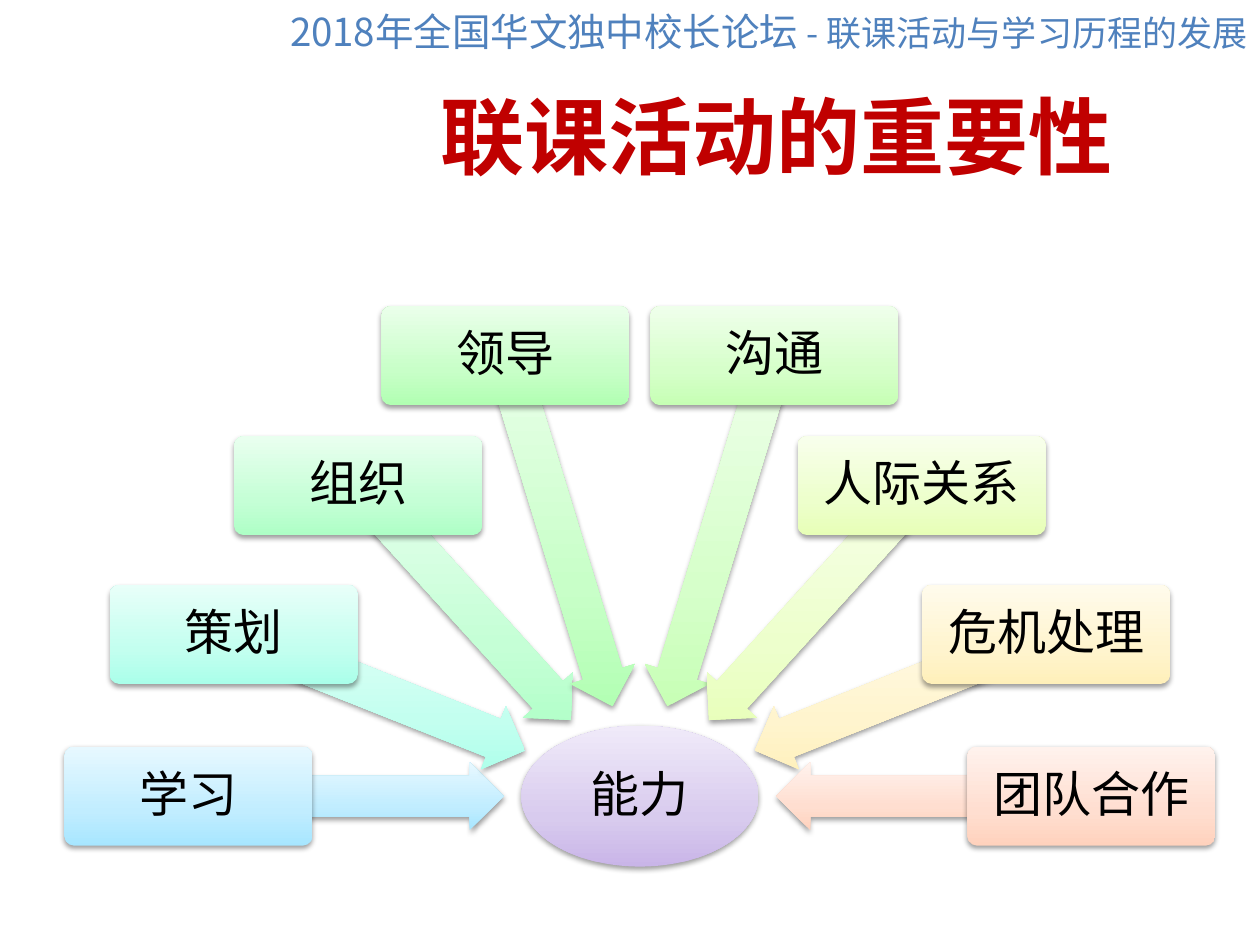
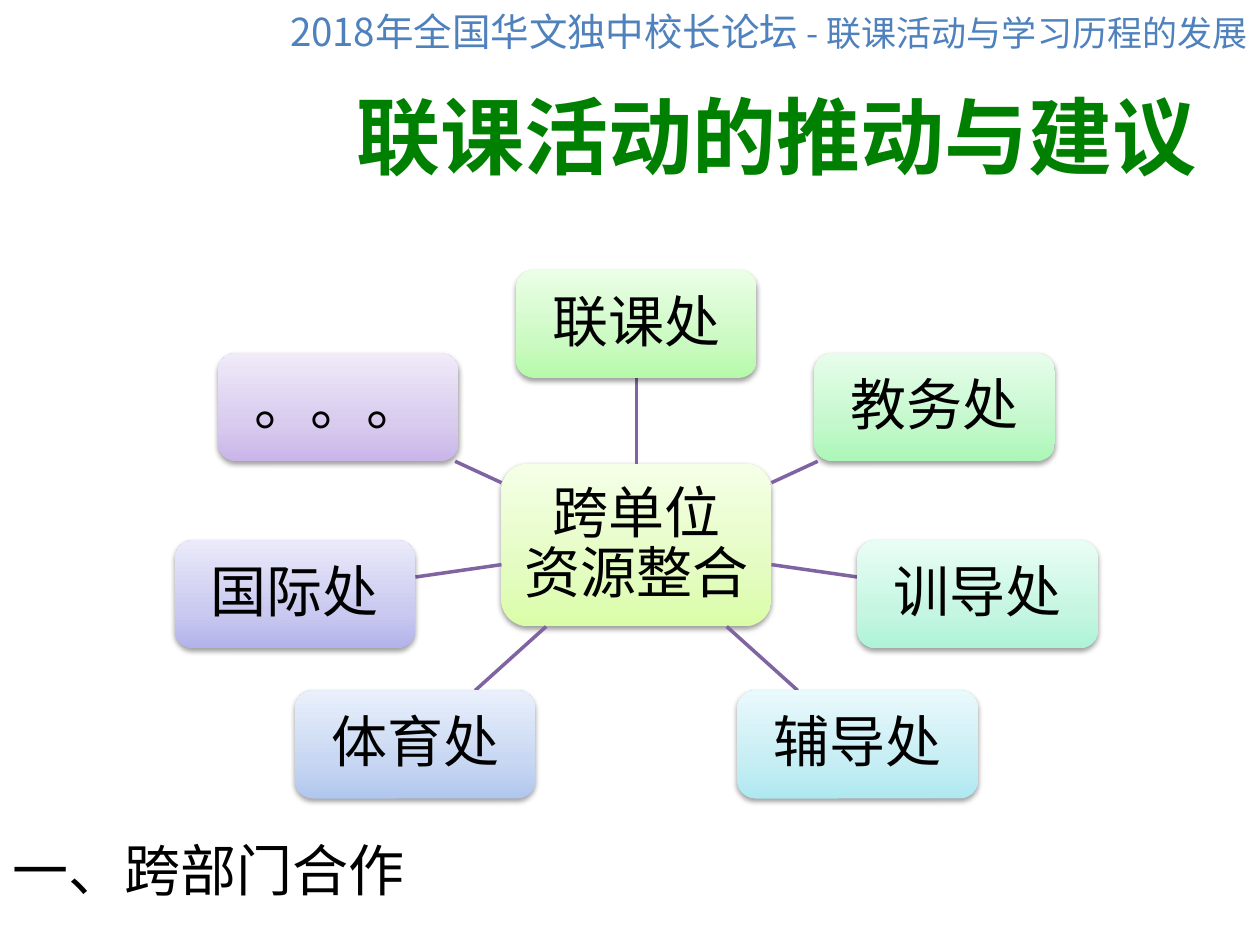
from math import atan2, cos, degrees, hypot, pi, sin

from lxml.etree import SubElement
from pptx import Presentation
from pptx.dml.color import RGBColor
from pptx.enum.shapes import MSO_CONNECTOR, MSO_SHAPE
from pptx.enum.text import MSO_ANCHOR, MSO_AUTO_SIZE, PP_ALIGN
from pptx.oxml import parse_xml
from pptx.oxml.ns import nsdecls, qn
from pptx.util import Cm, Pt

FONT = "Noto Sans CJK SC"
BLACK, RED, GREEN, BLUE = "000000", "C00000", "008000", "4F81BD"
WHITE, PALE_BLUE, PURPLE = "FFFFFF", "95B3D7", "8064A2"
LILAC_FADE = ("C9B5E8", "D8CBEE", "F0EAF9")
color = RGBColor.from_string


def style_font(font, size, font_color, bold=False, outline=None):
    """Set a font for Latin and Chinese text; outline is (colour, width in points)."""
    font.size, font.bold, font.name = Pt(size), bold, FONT
    font.color.rgb = color(font_color)
    properties = font._element
    properties.find(qn("a:latin")).addnext(
        parse_xml(f'<a:ea {nsdecls("a")} typeface="{FONT}"/>'))
    if outline:
        properties.insert(0, parse_xml(
            f'<a:ln {nsdecls("a")} w="{Pt(outline[1])}"><a:solidFill>'
            f'<a:srgbClr val="{outline[0]}"/></a:solidFill></a:ln>'))


def add_node(slide, kind, center, size, fade, text="", font_size=28, inset=0.15):
    """Add a shaded, shadowed shape around a centre; lengths are centimetres."""
    (x, y), (width, height) = center, size
    shape = slide.shapes.add_shape(
        kind, Cm(x - width / 2), Cm(y - height / 2), Cm(width), Cm(height))
    stops = "".join(f'<a:gs pos="{position}"><a:srgbClr val="{stop}"/></a:gs>'
                    for position, stop in zip((0, 35000, 100000), fade))
    properties = shape._element.spPr
    properties.append(parse_xml(
        f'<a:gradFill {nsdecls("a")} rotWithShape="0"><a:gsLst>{stops}</a:gsLst>'
        '<a:lin ang="16200000" scaled="0"/></a:gradFill>'))
    shape.line.fill.background()
    properties.append(parse_xml(
        f'<a:effectLst {nsdecls("a")}><a:outerShdw blurRad="40000" dist="20000" '
        'dir="5400000" rotWithShape="0"><a:srgbClr val="000000">'
        '<a:alpha val="38000"/></a:srgbClr></a:outerShdw></a:effectLst>'))
    if text:
        frame = shape.text_frame
        frame.word_wrap = True
        frame.vertical_anchor = MSO_ANCHOR.MIDDLE
        frame.margin_left = frame.margin_right = Cm(inset)
        frame.margin_top = frame.margin_bottom = Cm(inset)
        frame.text = text
        paragraph = frame.paragraphs[0]
        paragraph.alignment = PP_ALIGN.CENTER
        paragraph.line_spacing = 0.9
        style_font(paragraph.font, font_size, BLACK)
    return shape


presentation = Presentation()
presentation.slide_width, presentation.slide_height = Cm(25.4), Cm(19.05)

# Title and forum header on every slide
for title, title_color in (("联课活动的重要性", RED), ("联课活动的推动与建议", GREEN)):
    slide = presentation.slides.add_slide(presentation.slide_layouts[6])
    frame = slide.shapes.add_textbox(Cm(5.9), Cm(1.14), Cm(19.5), Cm(3.18)).text_frame
    frame.word_wrap = True
    frame.vertical_anchor = MSO_ANCHOR.MIDDLE
    paragraph = frame.paragraphs[0]
    paragraph.text = title
    paragraph.alignment = PP_ALIGN.CENTER
    style_font(paragraph.font, 48, title_color, True, (WHITE, 0.75))

    frame = slide.shapes.add_textbox(Cm(0), Cm(0.03), Cm(25.4), Cm(1.2)).text_frame
    frame.word_wrap = True
    frame.auto_size = MSO_AUTO_SIZE.SHAPE_TO_FIT_TEXT
    paragraph = frame.paragraphs[0]
    paragraph.alignment = PP_ALIGN.RIGHT
    for text, size in (("2018年全国华文独中校长论坛 ", 22), ("- 联课活动与学习历程的发展", 20)):
        run = paragraph.add_run()
        run.text = text
        style_font(run.font, size, BLUE, outline=(PALE_BLUE, 0.25))

importance_slide, proposal_slide = presentation.slides

# Slide 1: skills in an arch, each with an arrow towards the ability hub
hub_x, hub_y = 12.9, 16.05
add_node(importance_slide, MSO_SHAPE.OVAL, (hub_x, hub_y), (4.78, 2.84), LILAC_FADE, "能力")
arch = [(9.1, 0, 6.35), (8.19, 3.26, 6.32), (5.68, 6.26, 6.38), (2.71, 8.88, 7.39)]
places = [(-x, y, length) for x, y, length in arch] + arch[::-1]
skills = [
    ("学习", ("A7E6FF", "C1EDFF", "E7F8FF")),
    ("策划", ("AAFFEA", "C3FFEF", "E8FFF9")),
    ("组织", ("AEFFC6", "C5FFD6", "E9FFEF")),
    ("领导", ("B1FFB2", "C8FFC8", "EAFFEA")),
    ("沟通", ("C6FFB4", "D6FFCA", "EFFFEB")),
    ("人际关系", ("E7FFB7", "EDFFCC", "F8FFEC")),
    ("危机处理", ("FFF0BA", "FFF4CE", "FFFBEC")),
    ("团队合作", ("FFD2BD", "FFDED0", "FFF2ED")),
]
for (skill, fade), (right, up, length) in zip(skills, places):
    x, y = hub_x + right, hub_y - up
    reach = length / 2 / hypot(right, up)
    arrow = add_node(importance_slide, MSO_SHAPE.LEFT_ARROW,
                     (x - right * reach, y + up * reach), (length, 1.37), fade)
    arrow.adjustments[0], arrow.adjustments[1] = 0.6, 0.5
    arrow.rotation = degrees(atan2(-up, right)) % 360
    box = add_node(importance_slide, MSO_SHAPE.ROUNDED_RECTANGLE, (x, y), (5, 2), fade, skill)
    box.adjustments[0] = 0.1

# Slide 2: offices in a ring, linked edge to edge with the hub
hub_x, hub_y = 12.83, 10.99
hub_size, office_size = (5.44, 3.28), (4.85, 2.18)
ring_height = 4.46
add_node(proposal_slide, MSO_SHAPE.ROUNDED_RECTANGLE, (hub_x, hub_y), hub_size,
         ("DAFDA7", "E4FCC2", "F5FFE7"), "跨单位\v资源整合", 32, 0.23)
offices = [
    ("联课处", 0, ("B6FAA9", "CCFAC3", "EBFEE7")),
    ("教务处", 6.01, ("ABF7B7", "C4F8CC", "E7FDEB")),
    ("训导处", 6.88, ("ADF4D7", "C6F6E2", "E8FDF4")),
    ("辅导处", 4.46, ("AFE8F1", "C7EEF4", "E9F9FC")),
    ("体育处", -4.46, ("B1C7EE", "C8D7F2", "E9F0FB")),
    ("国际处", -6.88, ("B3B3EB", "CACAF0", "EAEAFA")),
    ("。。。", -6.01, LILAC_FADE),
]
for index, (office, right, fade) in enumerate(offices):
    down = -ring_height * cos(2 * pi * index / len(offices))
    # Share of the centre line that lies inside the hub and inside the office box
    hub_share, office_share = (
        min(side / 2 / abs(offset) for side, offset in zip(size, (right, down)) if offset)
        for size in (hub_size, office_size))
    start, end = ((Cm(hub_x + right * share), Cm(hub_y + down * share))
                  for share in (hub_share, 1 - office_share))
    link = proposal_slide.shapes.add_connector(MSO_CONNECTOR.STRAIGHT, *start, *end)
    link.line.color.rgb = color(PURPLE)
    link.line.width = Pt(2)
    SubElement(link._element.spPr, qn("a:effectLst"))
    add_node(proposal_slide, MSO_SHAPE.ROUNDED_RECTANGLE, (hub_x + right, hub_y + down),
             office_size, fade, office, 32, 0.23)

frame = proposal_slide.shapes.add_textbox(Cm(0), Cm(16.71), Cm(8.48), Cm(1.63)).text_frame
frame.word_wrap = False
frame.auto_size = MSO_AUTO_SIZE.SHAPE_TO_FIT_TEXT
paragraph = frame.paragraphs[0]
paragraph.text = "一、跨部门合作"
style_font(paragraph.font, 32, BLACK)

presentation.save("out.pptx")
